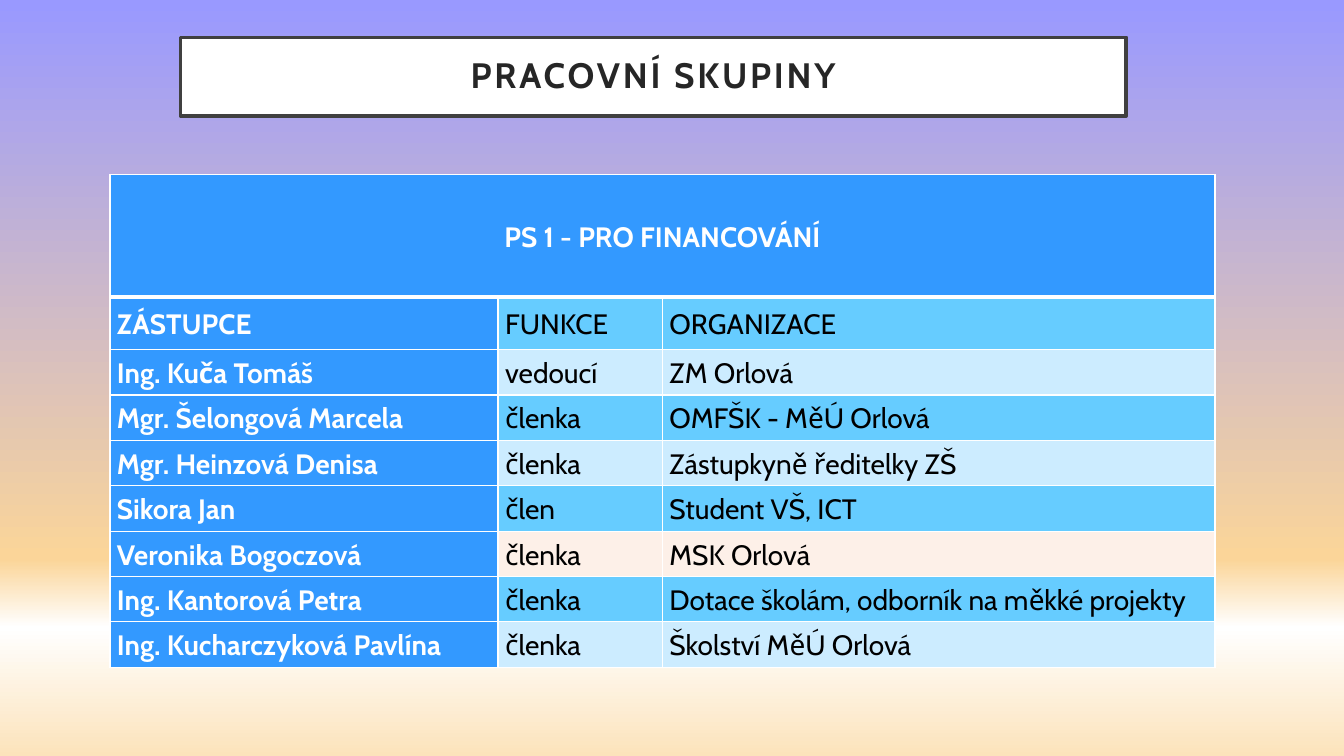
"""Build the slide that lists the members of the financing work group."""
from lxml import etree
from pptx import Presentation
from pptx.dml.color import RGBColor
from pptx.enum.shapes import MSO_SHAPE
from pptx.enum.text import MSO_ANCHOR, PP_ALIGN
from pptx.oxml.ns import qn
from pptx.util import Inches, Pt

RECT = MSO_SHAPE.RECTANGLE
MIDDLE = MSO_ANCHOR.MIDDLE
LEFT, CENTER = PP_ALIGN.LEFT, PP_ALIGN.CENTER
WHITE = RGBColor(0xFF, 0xFF, 0xFF)
BLACK = RGBColor(0x00, 0x00, 0x00)
INK = RGBColor(0x26, 0x26, 0x26)
FRAME = RGBColor(0x40, 0x40, 0x40)
BLUE = RGBColor(0x33, 0x99, 0xFF)
SKY = RGBColor(0x66, 0xCC, 0xFF)
PALE = RGBColor(0xCC, 0xEC, 0xFF)
CREAM = RGBColor(0xFD, 0xF0, 0xE8)
LILAC = RGBColor(0x99, 0x99, 0xFF)
SAND = RGBColor(0xFB, 0xD5, 0x99)
PEACH = RGBColor(0xFC, 0xE3, 0xBB)
FONT = "Cabin"
STOPS = [(0, LILAC), (74, SAND), (83, WHITE), (100, PEACH)]
COLS = [3.85, 1.63, 5.48]
ROWS = [1.22, 0.52] + [0.45] * 7
TEXT = [
    ("PS 1 - PRO FINANCOVÁNÍ", "", ""),
    ("ZÁSTUPCE", "FUNKCE", "ORGANIZACE"),
    ("Ing. Kuča Tomáš", "vedoucí", "ZM Orlová"),
    ("Mgr. Šelongová Marcela", "členka", "OMFŠK - MěÚ Orlová"),
    ("Mgr. Heinzová Denisa", "členka", "Zástupkyně ředitelky ZŠ"),
    ("Sikora Jan", "člen", "Student VŠ, ICT"),
    ("Veronika Bogoczová", "členka", "MSK Orlová"),
    ("Ing. Kantorová Petra", "členka", "Dotace školám, odborník na měkké projekty"),
    ("Ing. Kucharczyková Pavlína", "členka", "Školství MěÚ Orlová"),
]
CREAM_ROW = 6


def write(frame, text, size, color, bold, align, space):
    """Fill a text frame with one paragraph and return that paragraph."""
    para = frame.paragraphs[0]
    para.text = text
    para.alignment = align
    para.line_spacing = space
    para.font.name = FONT
    para.font.size = Pt(size)
    para.font.bold = bold
    para.font.color.rgb = color
    return para


def add_stroke(props, place, side, width):
    """Insert one white cell border at its place among the cell properties."""
    line = etree.Element(qn("a:" + side), w=str(Pt(width)))
    fill = etree.SubElement(line, qn("a:solidFill"))
    etree.SubElement(fill, qn("a:srgbClr"), val=str(WHITE))
    props.insert(place, line)


deck = Presentation()
deck.slide_width, deck.slide_height = Inches(13.33), Inches(7.5)
slide = deck.slides.add_slide(deck.slide_layouts[6])

back = slide.background.fill
back.gradient()
back.gradient_angle = 270
ramp = slide.element.find(".//" + qn("a:gsLst"))
for stop in list(ramp):
    ramp.remove(stop)
for share, color in STOPS:
    stop = etree.SubElement(ramp, qn("a:gs"), pos=str(share * 1000))
    etree.SubElement(stop, qn("a:srgbClr"), val=str(color))

title = slide.shapes.add_shape(RECT, Inches(1.79), Inches(0.37), Inches(9.38), Inches(0.78))
title.shadow.inherit = False
title.fill.solid()
title.fill.fore_color.rgb = WHITE
title.line.color.rgb = FRAME
title.line.width = Pt(2.5)
frame = title.text_frame
frame.word_wrap = True
frame.vertical_anchor = MIDDLE
frame.margin_left = frame.margin_right = Inches(0.2)
frame.margin_top = frame.margin_bottom = Inches(0.2)
para = write(frame, "PRACOVNÍ SKUPINY", 25.2, INK, True, CENTER, 0.9)
para.runs[0].font.bold = True
para.runs[0].font.size = Pt(25.2)
para.runs[0]._r.get_or_add_rPr().set("spc", "200")

table = slide.shapes.add_table(len(ROWS), len(COLS), Inches(1.09), Inches(1.73),
                               Inches(sum(COLS)), Inches(sum(ROWS))).table
for col, width in zip(table.columns, COLS):
    col.width = Inches(width)
for row, height in zip(table.rows, ROWS):
    row.height = Inches(height)
table.cell(0, 0).merge(table.cell(0, len(COLS) - 1))

for r, words in enumerate(TEXT):
    band = CREAM if r == CREAM_ROW else SKY if r % 2 else PALE
    for c, word in enumerate(words):
        cell = table.cell(r, c)
        head = r == 0 or c == 0
        cell.fill.solid()
        cell.fill.fore_color.rgb = BLUE if head else band
        cell.vertical_anchor = MIDDLE
        cell.margin_left = cell.margin_right = Inches(0.07)
        cell.margin_top = cell.margin_bottom = 0
        write(cell.text_frame, word, 20, WHITE if head else BLACK, head,
              LEFT if r else CENTER, 1.07)
        props = cell._tc.get_or_add_tcPr()
        widths = {"lnL": 1, "lnR": 1, "lnT": 3 if r == 1 else 1, "lnB": 1 if r else 3}
        for place, (side, width) in enumerate(widths.items()):
            add_stroke(props, place, side, width)

deck.save("out.pptx")
